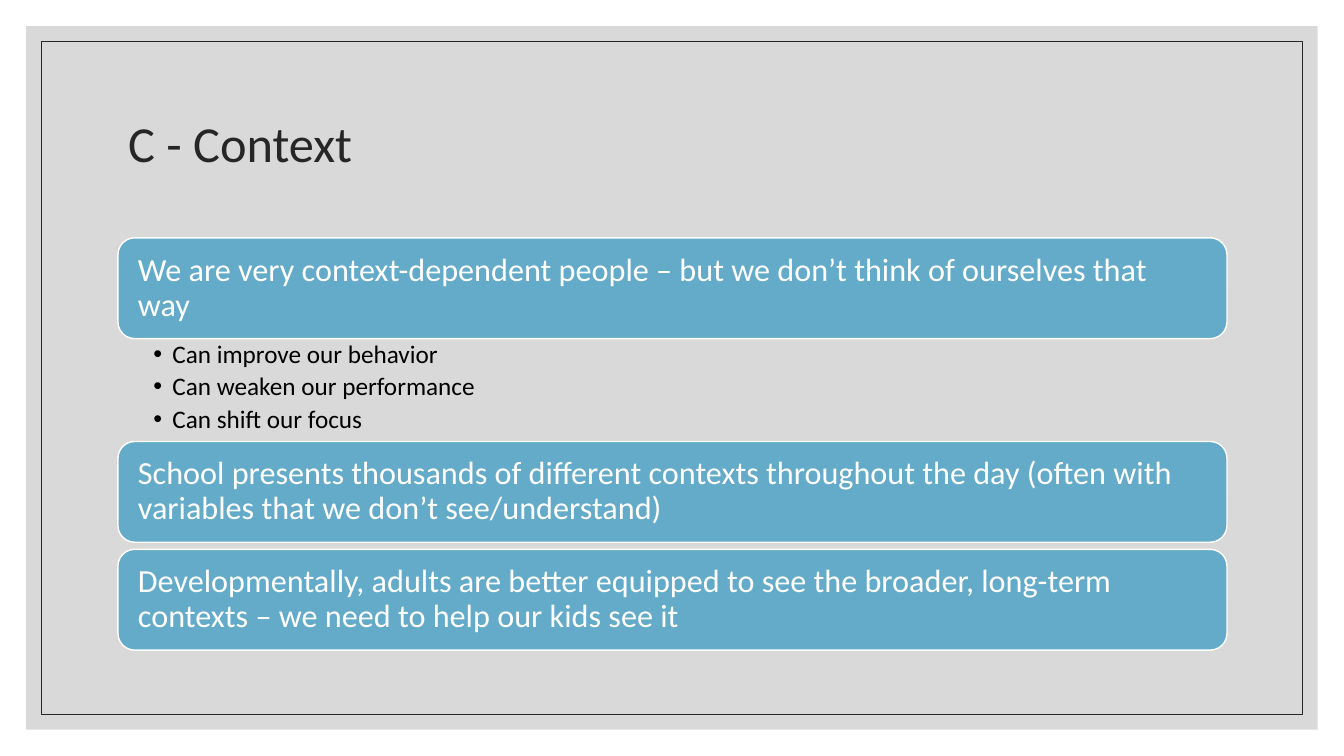
from dataclasses import dataclass

from pptx import Presentation
from pptx.dml.color import RGBColor
from pptx.enum.shapes import MSO_SHAPE
from pptx.enum.text import MSO_ANCHOR, MSO_AUTO_SIZE, PP_ALIGN
from pptx.util import Inches, Pt

RECTANGLE = MSO_SHAPE.RECTANGLE
ROUNDED = MSO_SHAPE.ROUNDED_RECTANGLE
TOP, MIDDLE = MSO_ANCHOR.TOP, MSO_ANCHOR.MIDDLE
LEFT = PP_ALIGN.LEFT
NO_FIT = MSO_AUTO_SIZE.NONE
TITLE_AND_CONTENT = 1


@dataclass(frozen=True)
class Theme:
    font: str = "Calibri"
    panel: str = "D9D9D9"
    ink: str = "262626"
    card: str = "63ABC9"
    light: str = "FFFFFF"
    dark: str = "000000"
    title_size: float = 36
    card_size: float = 23
    list_size: float = 18


@dataclass(frozen=True)
class Box:
    left: float
    top: float
    width: float
    height: float

    def inset(self, margin):
        return Box(self.left + margin, self.top + margin,
                   self.width - 2 * margin, self.height - 2 * margin)

    def band(self, offset, height):
        return Box(self.left, self.top + offset, self.width, height)

    def lengths(self):
        return [Inches(v) for v in (self.left, self.top, self.width, self.height)]


THEME = Theme()
PAGE = Box(0, 0, 13.33, 7.5)
CONTENT = Box(1.17, 0.7, 11, 5.75)
TITLE_HEIGHT = 1.5
CARD_HEIGHT = 1
LIST_HEIGHT = 1.02
CARD_GAP = 0.07
FIRST_CARD = 1.66

TITLE = "C - Context"
POINTS = [
    ("We are very context-dependent people – but we don’t think of ourselves that way",
     ["Can improve our behavior", "Can weaken our performance", "Can shift our focus"]),
    ("School presents thousands of different contexts throughout the day "
     "(often with variables that we don’t see/understand)", []),
    ("Developmentally, adults are better equipped to see the broader, "
     "long-term contexts – we need to help our kids see it", []),
]


def write(shape, lines, size, color, anchor=MIDDLE, insets=(0.1, 0.05, 0.1, 0.05),
          after=0, hanging=None):
    frame = shape.text_frame
    frame.word_wrap = True
    frame.auto_size = NO_FIT
    frame.vertical_anchor = anchor
    (frame.margin_left, frame.margin_top,
     frame.margin_right, frame.margin_bottom) = map(Inches, insets)
    for index, line in enumerate(lines):
        para = frame.add_paragraph() if index else frame.paragraphs[0]
        para.alignment = LEFT
        para.line_spacing = 0.9
        para.space_before = Pt(0)
        para.space_after = Pt(after)
        if hanging:
            properties = para._p.get_or_add_pPr()
            properties.set("marL", str(Inches(hanging)))
            properties.set("indent", str(-Inches(hanging)))
        span = para.add_run()
        span.text = line
        span.font.name = THEME.font
        span.font.size = Pt(size)
        span.font.color.rgb = RGBColor.from_string(color)


def add_panel(slide, box, kind, fill=None, line=None, weight=1):
    shape = slide.shapes.add_shape(kind, *box.lengths())
    shape.shadow.inherit = False
    if fill:
        shape.fill.solid()
        shape.fill.fore_color.rgb = RGBColor.from_string(fill)
    else:
        shape.fill.background()
    if line:
        shape.line.color.rgb = RGBColor.from_string(line)
        shape.line.width = Pt(weight)
    else:
        shape.line.fill.background()
    return shape


def place(placeholder, box):
    (placeholder.left, placeholder.top,
     placeholder.width, placeholder.height) = box.lengths()
    tree = placeholder._element.getparent()
    tree.append(placeholder._element)


def draw_frame(slide, box):
    add_panel(slide, box.inset(0.26), RECTANGLE, fill=THEME.panel)
    add_panel(slide, box.inset(0.41), RECTANGLE, line=THEME.ink, weight=0.5)


def draw_title(slide, box):
    title = slide.shapes.title
    place(title, box)
    write(title, [TITLE], THEME.title_size, THEME.ink)


def draw_points(slide, box):
    offset = 0
    for statement, details in POINTS:
        card = add_panel(slide, box.band(offset, CARD_HEIGHT), ROUNDED,
                         fill=THEME.card, line=THEME.light)
        write(card, [statement], THEME.card_size, THEME.light,
              insets=(0.15, 0.1, 0.15, 0.1))
        offset += CARD_HEIGHT
        if details:
            body = slide.placeholders[1]
            place(body, box.band(offset, LIST_HEIGHT))
            write(body, details, THEME.list_size, THEME.dark, anchor=TOP,
                  insets=(0.35, 0.03, 0.18, 0.03), after=0.2 * THEME.list_size,
                  hanging=0.19)
            offset += LIST_HEIGHT
        else:
            offset += CARD_GAP


def main():
    deck = Presentation()
    deck.slide_width, deck.slide_height = Inches(PAGE.width), Inches(PAGE.height)
    slide = deck.slides.add_slide(deck.slide_layouts[TITLE_AND_CONTENT])
    draw_frame(slide, PAGE)
    draw_title(slide, CONTENT.band(0, TITLE_HEIGHT))
    draw_points(slide, CONTENT.band(FIRST_CARD, CONTENT.height - FIRST_CARD))
    deck.save("out.pptx")


if __name__ == "__main__":
    main()
